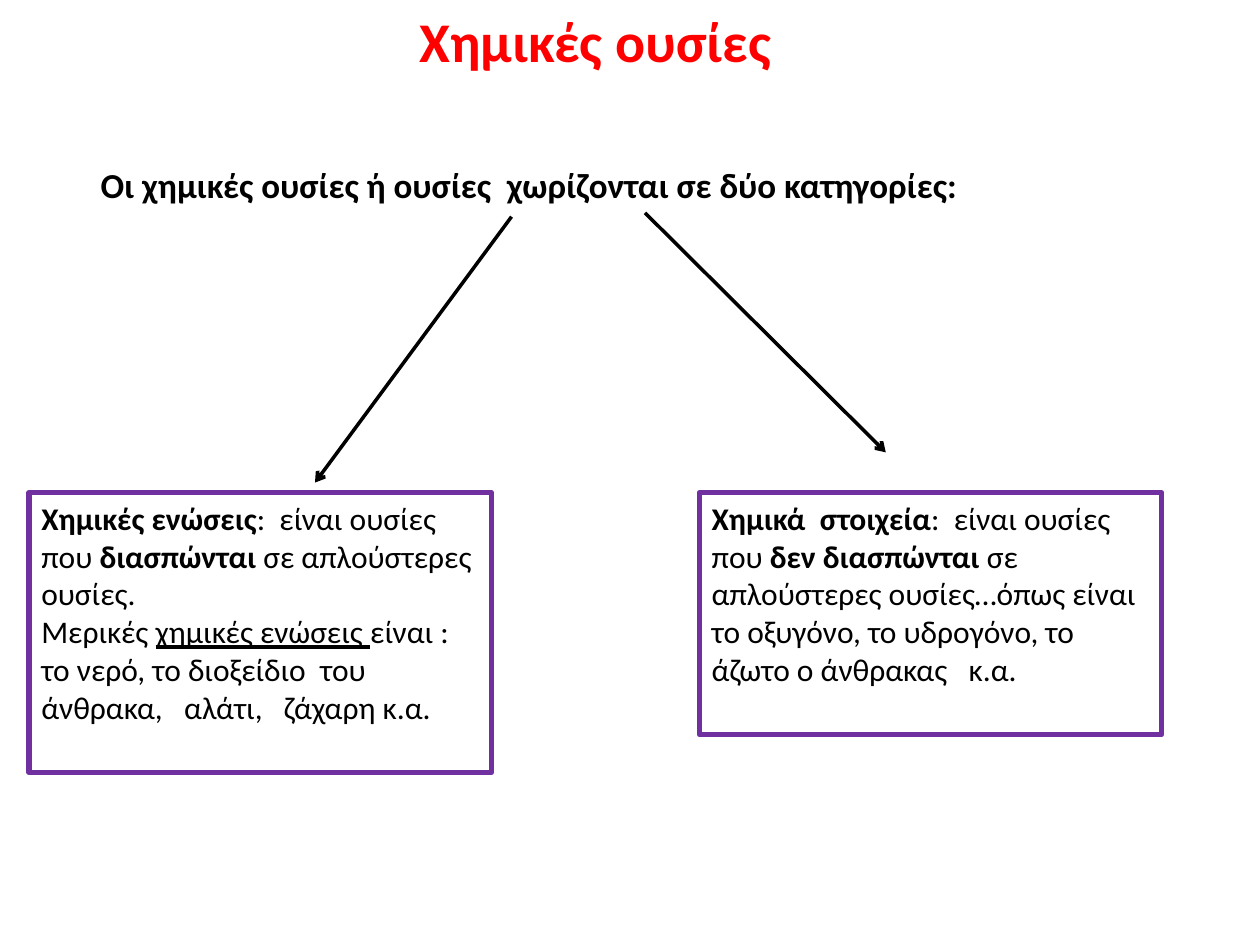
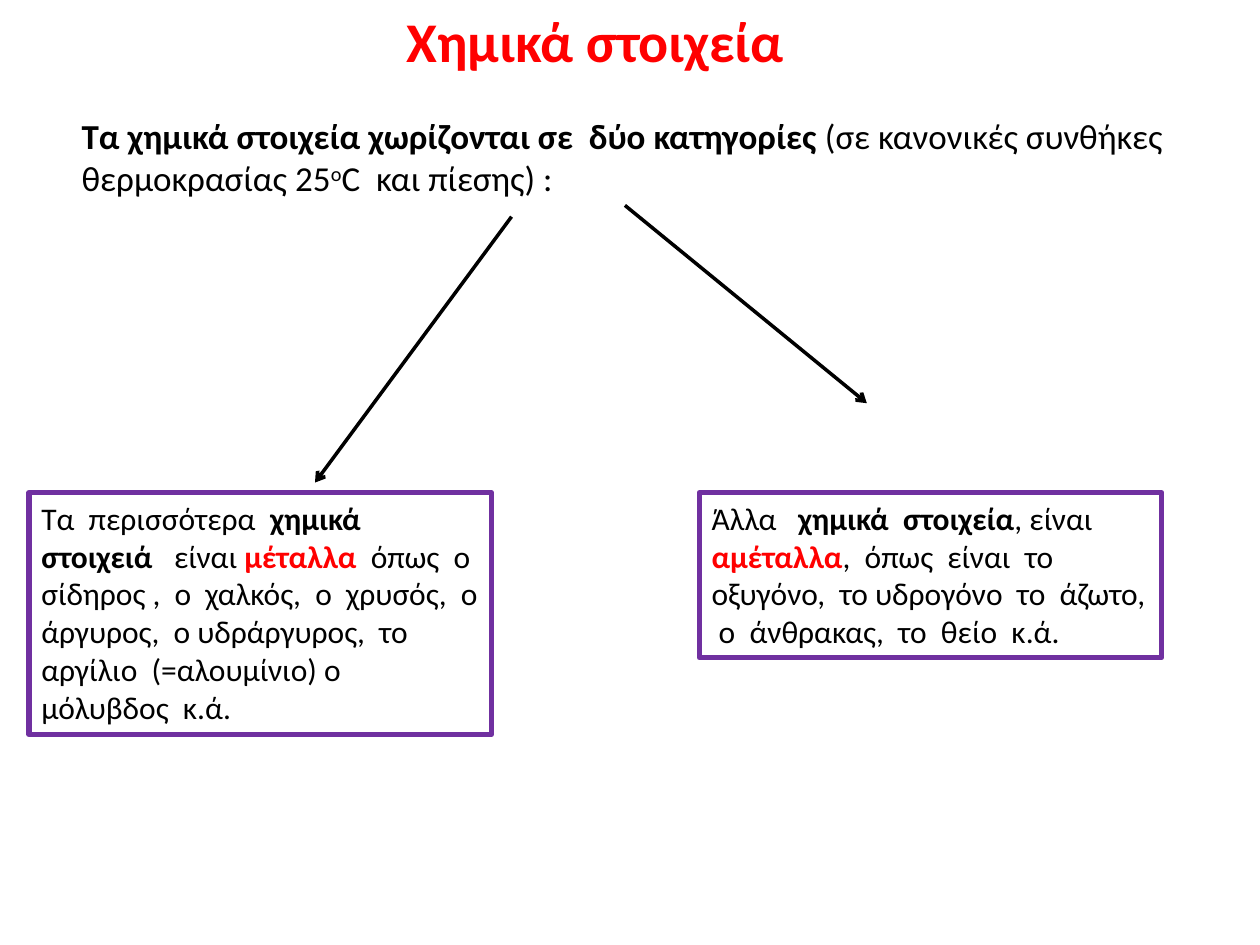
import pptx
import pptx.util
import pptx.dml.color
import pptx.enum.shapes
import pptx.enum.text
import lxml.etree

Inches = pptx.util.Inches
Pt = pptx.util.Pt
COLORS = {"title": "FF0000", "accent": "FF0000", "text": "000000", "border": "7030A0"}


def color(name):
    return pptx.dml.color.RGBColor.from_string(COLORS[name])


def add_text(slide, place, paragraphs, size, color_name="text"):
    box = slide.shapes.add_textbox(*[Inches(length) for length in place])
    frame = box.text_frame
    frame.word_wrap = True
    for number, runs in enumerate(paragraphs):
        paragraph = frame.paragraphs[0] if number == 0 else frame.add_paragraph()
        paragraph.font.name = "Calibri"
        paragraph.font.size = Pt(size)
        paragraph.font.color.rgb = color(color_name)
        for text, style in runs:
            run = paragraph.add_run()
            run.text = text
            if "bold" in style:
                run.font.bold = True
            if "underline" in style:
                run.font.underline = True
            if "accent" in style:
                run.font.color.rgb = color("accent")
            if "super" in style:
                run.font._element.set("baseline", "30000")
    return box


topics = [
    {
        "title": "Χημικές ουσίες",
        "intro_place": (0.7, 1.25, 8.83, 0.44),
        "intro": [("Οι χημικές ουσίες ή ουσίες  χωρίζονται σε δύο κατηγορίες:", "bold")],
        "categories": [
            (2.22, [
                [("Χημικές ενώσεις", "bold"), (":  είναι ουσίες που ", ""),
                 ("διασπώνται", "bold"), (" σε απλούστερες ουσίες.", "")],
                [("Μερικές ", ""), ("χημικές ενώσεις ", "underline"),
                 ("είναι :  το νερό, το διοξείδιο  του  άνθρακα,   αλάτι,   ζάχαρη κ.α.", "")],
            ]),
            (1.92, [
                [("Χημικά  στοιχεία", "bold"), (":  είναι ουσίες που ", ""),
                 ("δεν διασπώνται ", "bold"),
                 ("σε απλούστερες ουσίες…όπως είναι το οξυγόνο, το υδρογόνο, "
                  "το άζωτο ο άνθρακας   κ.α.", "")],
            ]),
        ],
        "right_arrow": (5.12, 1.69, 7.03, 3.59),
    },
    {
        "title": "Χημικά στοιχεία",
        "intro_place": (0.55, 0.86, 8.83, 0.77),
        "intro": [("Τα χημικά στοιχεία χωρίζονται σε  δύο κατηγορίες ", "bold"),
                  ("(σε κανονικές συνθήκες θερμοκρασίας 25", ""),
                  ("ο", "super"), ("C  και πίεσης) :", "")],
        "categories": [
            (1.92, [
                [("Τα  περισσότερα  ", ""), ("χημικά στοιχειά   ", "bold"), ("είναι ", ""),
                 ("μέταλλα", "bold accent"),
                 ("  όπως  ο  σίδηρος ,  ο  χαλκός,  ο  χρυσός,  ο άργυρος,  ο υδράργυρος,  "
                  "το  αργίλιο  (=αλουμίνιο) ο  μόλυβδος  κ.ά.", "")],
            ]),
            (1.31, [
                [("Άλλα   ", ""), ("χημικά  στοιχεία", "bold"), (", είναι  ", ""),
                 ("αμέταλλα", "bold accent"),
                 (",  όπως  είναι  το  οξυγόνο,  το υδρογόνο  το  άζωτο,  ο  άνθρακας,  "
                  "το  θείο  κ.ά.", "")],
            ]),
        ],
        "right_arrow": (4.96, 1.63, 6.88, 3.2),
    },
]
left_arrow = (4.06, 1.72, 2.5, 3.83)

deck = pptx.Presentation()
deck.slide_width = Inches(10)
deck.slide_height = Inches(7.5)

for topic in topics:
    slide = deck.slides.add_slide(deck.slide_layouts[6])
    add_text(slide, topic["intro_place"], [topic["intro"]], 20)

    title = add_text(slide, (1.17, 0, 7.11, 0.63), [[(topic["title"], "bold")]], 32, "title")
    title.text_frame.paragraphs[0].alignment = pptx.enum.text.PP_ALIGN.CENTER

    for left, (height, paragraphs) in zip((0.23, 5.55), topic["categories"]):
        category = add_text(slide, (left, 3.91, 3.67, height), paragraphs, 18)
        category.line.color.rgb = color("border")
        category.line.width = Pt(3)

    for ends in (left_arrow, topic["right_arrow"]):
        arrow = slide.shapes.add_connector(
            pptx.enum.shapes.MSO_CONNECTOR.STRAIGHT, *[Inches(length) for length in ends])
        arrow.line.color.rgb = color("text")
        arrow.line.width = Pt(2)
        namespace = "{http://schemas.openxmlformats.org/drawingml/2006/main}"
        lxml.etree.SubElement(arrow.line._get_or_add_ln(), namespace + "tailEnd", type="arrow")
        lxml.etree.SubElement(arrow._element.spPr, namespace + "effectLst")

deck.save("out.pptx")
